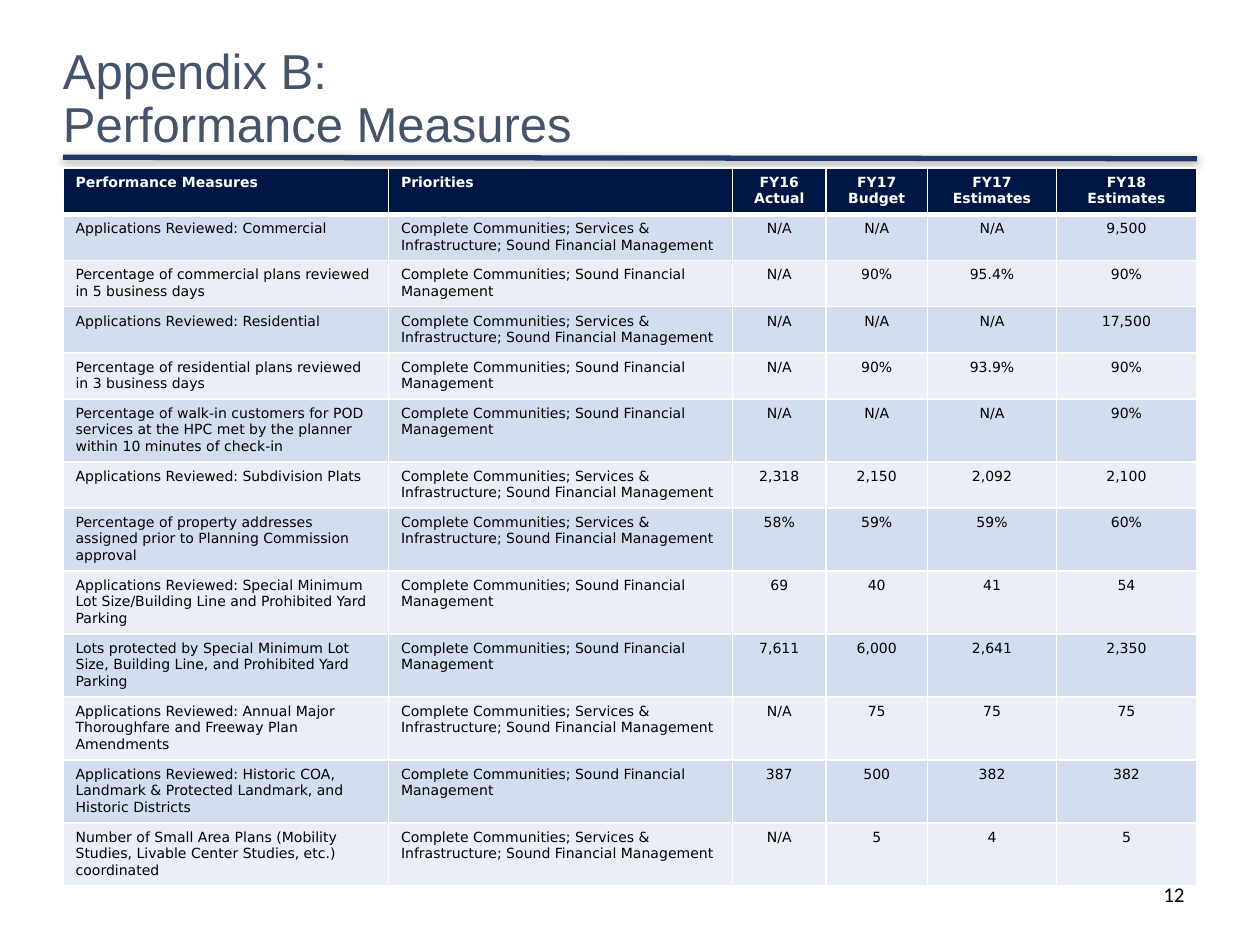
from lxml import etree
from pptx import Presentation
from pptx.dml.color import RGBColor
from pptx.enum.shapes import MSO_CONNECTOR
from pptx.enum.text import MSO_ANCHOR, PP_ALIGN
from pptx.oxml.ns import qn
from pptx.util import Cm, Pt

LEFT, RIGHT = 1.27, 24.13
COLUMN_WIDTHS = [6.56, 6.94, 1.88, 2.05, 2.6, 2.82]
SHORT_ROW, TALL_ROW = 0.93, 1.26
TALL_ROWS = {5, 7, 8, 9, 10, 11, 12}

SOUND = "Complete Communities; Sound Financial Management"
SERVICES = "Complete Communities; Services & Infrastructure; Sound Financial Management"

HEADER = ["Performance Measures", "Priorities", "FY16\nActual", "FY17\nBudget",
          "FY17\nEstimates", "FY18\nEstimates"]
MEASURES = [
    ["Applications Reviewed: Commercial", SERVICES, "N/A", "N/A", "N/A", "9,500"],
    ["Percentage of commercial plans reviewed in 5 business days", SOUND,
     "N/A", "90%", "95.4%", "90%"],
    ["Applications Reviewed: Residential", SERVICES, "N/A", "N/A", "N/A", "17,500"],
    ["Percentage of residential plans reviewed in 3 business days", SOUND,
     "N/A", "90%", "93.9%", "90%"],
    ["Percentage of walk-in customers for POD services at the HPC met by the planner "
     "within 10 minutes of check-in", SOUND, "N/A", "N/A", "N/A", "90%"],
    ["Applications Reviewed: Subdivision Plats", SERVICES,
     "2,318", "2,150", "2,092", "2,100"],
    ["Percentage of property addresses assigned prior to Planning Commission approval",
     SERVICES, "58%", "59%", "59%", "60%"],
    ["Applications Reviewed: Special Minimum Lot Size/Building Line and Prohibited Yard "
     "Parking", SOUND, "69", "40", "41", "54"],
    ["Lots protected by Special Minimum Lot Size, Building Line, and Prohibited Yard "
     "Parking", SOUND, "7,611", "6,000", "2,641", "2,350"],
    ["Applications Reviewed: Annual Major Thoroughfare and Freeway Plan Amendments",
     SERVICES, "N/A", "75", "75", "75"],
    ["Applications Reviewed: Historic COA, Landmark & Protected Landmark, and Historic "
     "Districts", SOUND, "387", "500", "382", "382"],
    ["Number of Small Area Plans (Mobility Studies, Livable Center Studies, etc.) "
     "coordinated", SERVICES, "N/A", "5", "4", "5"],
]


def color(hex_string):
    return RGBColor.from_string(hex_string)


def format_text(text_frame, font_name, size, hex_string, bold=False, align=PP_ALIGN.LEFT):
    for paragraph in text_frame.paragraphs:
        paragraph.alignment = align
        for run in paragraph.runs:
            run.font.name = font_name
            run.font.size = Pt(size)
            run.font.bold = bold
            run.font.color.rgb = color(hex_string)


def add_text(slide, text, left, top, width, height):
    text_frame = slide.shapes.add_textbox(Cm(left), Cm(top), Cm(width), Cm(height)).text_frame
    text_frame.word_wrap = True
    text_frame.text = text
    return text_frame


def add_title(slide, text):
    text_frame = add_text(slide, text, LEFT, 0.84, 17.42, 2.34)
    text_frame.margin_left = text_frame.margin_right = 0
    text_frame.margin_top = text_frame.margin_bottom = 0
    text_frame.vertical_anchor = MSO_ANCHOR.MIDDLE
    text_frame.paragraphs[0].line_spacing = 0.9
    format_text(text_frame, "Arial", 28, "44546A")


def add_rule(slide):
    rule = slide.shapes.add_connector(
        MSO_CONNECTOR.STRAIGHT, Cm(LEFT), Cm(3.17), Cm(RIGHT), Cm(3.2))
    rule.line.color.rgb = color("203864")
    rule.line.width = Pt(3)
    # Soft shadow straight below the rule
    effects = etree.SubElement(rule._element.spPr, qn("a:effectLst"))
    shadow = etree.SubElement(effects, qn("a:outerShdw"), blurRad=str(Pt(5)),
                              dist=str(Pt(1.6)), dir="5400000", rotWithShape="0")
    shade = etree.SubElement(shadow, qn("a:srgbClr"), val="000000")
    etree.SubElement(shade, qn("a:alpha"), val="38000")


def set_borders(cell, top=1, bottom=1):
    properties = cell._tc.get_or_add_tcPr()
    for side, width in (("L", 1), ("R", 1), ("T", top), ("B", bottom)):
        line = etree.SubElement(properties, qn(f"a:ln{side}"), w=str(Pt(width)))
        fill = etree.SubElement(line, qn("a:solidFill"))
        etree.SubElement(fill, qn("a:srgbClr"), val="FFFFFF")


def fill_cell(cell, text, row, column):
    is_header = row == 0
    cell.text_frame.text = text
    format_text(cell.text_frame, "DejaVu Sans", 8, "FFFFFF" if is_header else "000000",
                bold=is_header, align=PP_ALIGN.CENTER if column > 1 else PP_ALIGN.LEFT)
    set_borders(cell, top=3 if row == 1 else 1, bottom=3 if is_header else 1)
    cell.fill.solid()
    band = "D2DEEF" if row % 2 else "EAEFF7"
    cell.fill.fore_color.rgb = color("001746" if is_header else band)


def add_measures_table(slide):
    rows = [HEADER] + MEASURES
    heights = [TALL_ROW if row in TALL_ROWS else SHORT_ROW for row in range(len(rows))]
    table = slide.shapes.add_table(
        len(rows), len(HEADER), Cm(LEFT), Cm(3.39),
        Cm(sum(COLUMN_WIDTHS)), Cm(sum(heights))).table
    for column, width in zip(table.columns, COLUMN_WIDTHS):
        column.width = Cm(width)
    for row, (texts, height) in enumerate(zip(rows, heights)):
        table.rows[row].height = Cm(height)
        for column, text in enumerate(texts):
            fill_cell(table.cell(row, column), text, row, column)


def main():
    presentation = Presentation()
    presentation.slide_width = Cm(25.4)
    presentation.slide_height = Cm(19.05)
    slide = presentation.slides.add_slide(presentation.slide_layouts[6])

    # Heading
    add_rule(slide)
    add_title(slide, "Appendix B:\vPerformance Measures")

    # Page number
    page_number = add_text(slide, "12", 18.21, 17.65, 5.92, 1.02)
    format_text(page_number, "Calibri", 12, "000000", align=PP_ALIGN.RIGHT)

    # Measures by fiscal year
    add_measures_table(slide)

    presentation.save("out.pptx")


if __name__ == "__main__":
    main()
